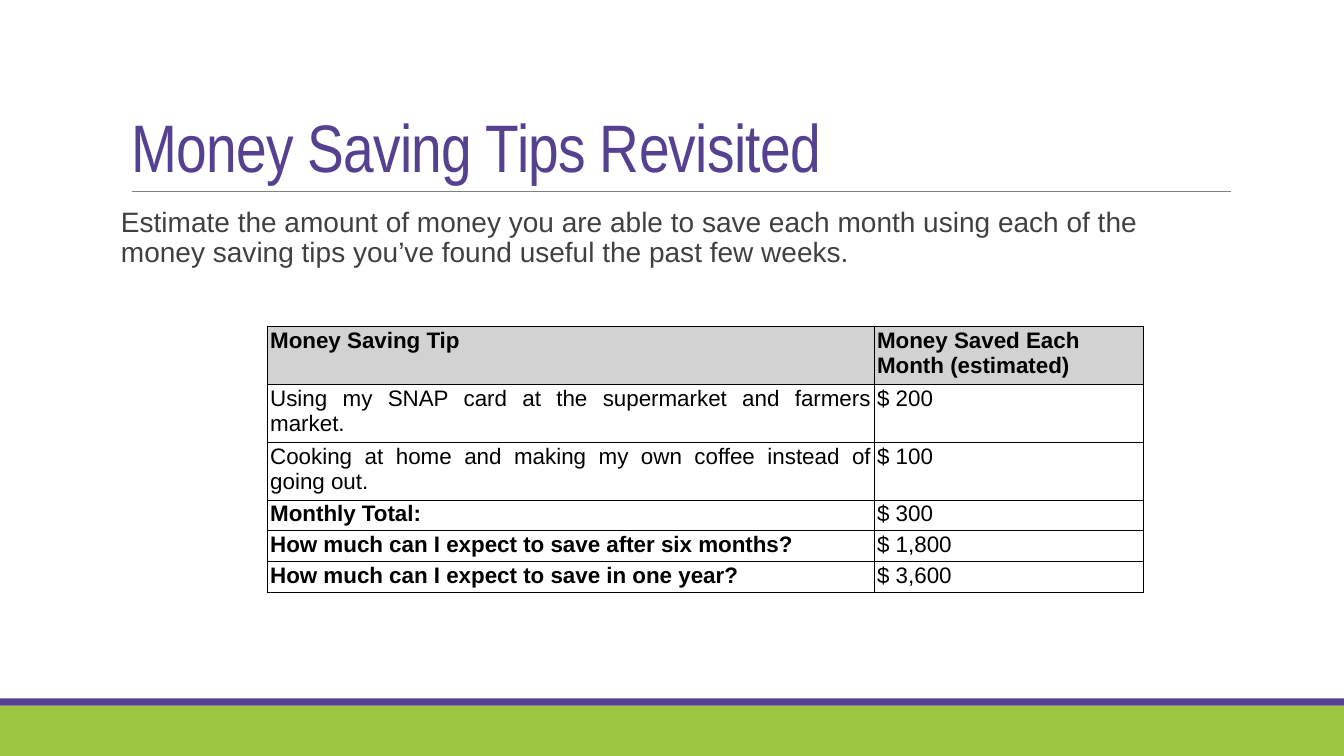
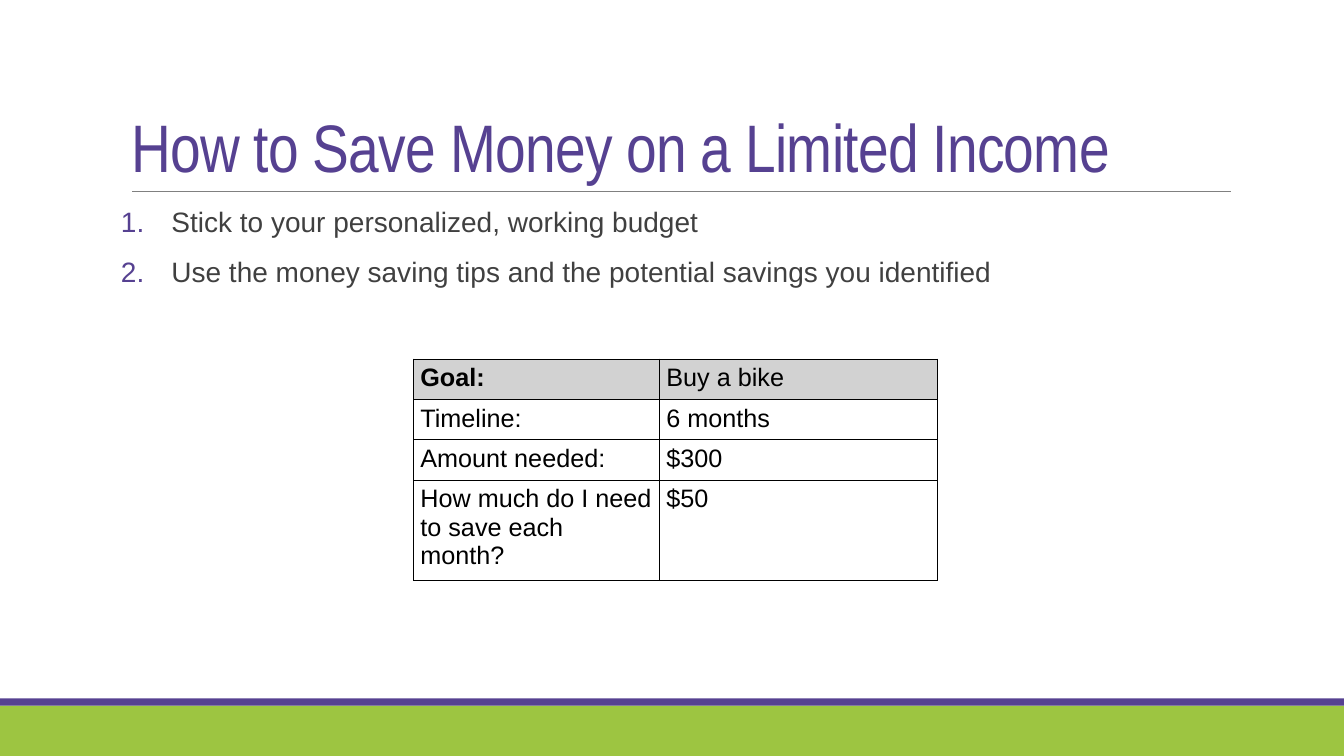
from dataclasses import dataclass

from lxml.etree import SubElement
from pptx import Presentation
from pptx.dml.color import RGBColor
from pptx.enum.shapes import MSO_CONNECTOR, MSO_SHAPE
from pptx.enum.text import MSO_ANCHOR, MSO_AUTO_SIZE, PP_ALIGN
from pptx.oxml.ns import qn
from pptx.util import Inches, Pt


@dataclass(frozen=True)
class Theme:
    purple: str = "564191"
    green: str = "9DC541"
    rule: str = "808080"
    text: str = "404040"
    black: str = "000000"
    header: str = "D2D2D2"
    title_font: str = "Arial Narrow"
    body_font: str = "Arial"
    title_size: int = 48
    body_size: int = 20


theme = Theme()
color = RGBColor.from_string
BANDS = [(7, 0.5, theme.green), (6.93, 0.07, theme.purple)]

SLIDES = [
    {
        "title": "Money Saving Tips Revisited",
        "body": [
            "Estimate the amount of money you are able to save each month using "
            "each of the money saving tips you’ve found useful the past few weeks."
        ],
        "numbered": False,
        "table": {
            "left": 2.65, "top": 3.24, "columns": [6.02, 2.67], "row_height": 0.3,
            "margins": (0.03, 0.02), "size": 16, "justified": True,
            "bold": {(0, 0), (0, 1), (3, 0), (4, 0), (5, 0)},
            "rows": [
                ("Money Saving Tip", "Money Saved Each Month (estimated)"),
                ("Using my SNAP card at the supermarket and farmers market.", "$ 200"),
                ("Cooking at home and making my own coffee instead of going out.", "$ 100"),
                ("Monthly Total:", "$ 300"),
                ("How much can I expect to save after six months?", "$ 1,800"),
                ("How much can I expect to save in one year?", "$ 3,600"),
            ],
        },
    },
    {
        "title": "How to Save Money on a Limited Income",
        "body": [
            "Stick to your personalized, working budget",
            "Use the money saving tips and the potential savings you identified",
        ],
        "numbered": True,
        "table": {
            "left": 4.1, "top": 3.56, "columns": [2.44, 2.76], "row_height": 0.38,
            "margins": (0.07, 0.05), "size": 18, "justified": False,
            "bold": {(0, 0)},
            "rows": [
                ("Goal:", "Buy a bike"),
                ("Timeline:", "6 months"),
                ("Amount needed:", "$300"),
                ("How much do I need to save each month?", "$50"),
            ],
        },
    },
]


def add_run(paragraph, text, font_name, size, font_color, bold=False):
    run = paragraph.add_run()
    run.text = text
    run.font.name = font_name
    run.font.size = Pt(size)
    run.font.bold = bold
    run.font.color.rgb = color(font_color)
    return run


def add_solid_fill(parent, fill_color):
    fill = SubElement(parent, qn("a:solidFill"))
    SubElement(fill, qn("a:srgbClr"), val=fill_color)


presentation = Presentation()
presentation.slide_width = Inches(13.33)
presentation.slide_height = Inches(7.5)
title_only = presentation.slide_layouts[5]

for content in SLIDES:
    slide = presentation.slides.add_slide(title_only)

    # Footer bands
    for top, height, band_color in BANDS:
        band = slide.shapes.add_shape(
            MSO_SHAPE.RECTANGLE, 0, Inches(top), presentation.slide_width, Inches(height))
        band.shadow.inherit = False
        band.fill.solid()
        band.fill.fore_color.rgb = color(band_color)
        band.line.fill.background()

    # Rule under the title
    rule = slide.shapes.add_connector(
        MSO_CONNECTOR.STRAIGHT, Inches(1.31), Inches(1.9), Inches(12.21), Inches(1.9))
    rule.line.color.rgb = color(theme.rule)
    rule.line.width = Pt(0.5)
    SubElement(rule.element.spPr, qn("a:effectLst"))

    # Title
    title = slide.shapes.title
    title.left, title.top = Inches(1.2), Inches(0.31)
    title.width, title.height = Inches(11), Inches(1.59)
    title.text_frame.auto_size = MSO_AUTO_SIZE.NONE
    title.text_frame.vertical_anchor = MSO_ANCHOR.BOTTOM
    paragraph = title.text_frame.paragraphs[0]
    paragraph.alignment = PP_ALIGN.LEFT
    paragraph.line_spacing = 0.85
    run = add_run(paragraph, content["title"], theme.title_font, theme.title_size, theme.purple)
    run.font._element.set("spc", "-50")

    # Body text
    body = slide.shapes.add_textbox(Inches(1.2), Inches(2.02), Inches(11), Inches(1.1))
    frame = body.text_frame
    frame.word_wrap = True
    frame.margin_left = frame.margin_right = 0
    for index, text in enumerate(content["body"]):
        paragraph = frame.add_paragraph() if index else frame.paragraphs[0]
        if content["numbered"]:
            properties = paragraph._p.get_or_add_pPr()
            properties.set("marL", str(Inches(0.5)))
            properties.set("indent", str(-Inches(0.5)))
            bullet_color = SubElement(properties, qn("a:buClr"))
            SubElement(bullet_color, qn("a:srgbClr"), val=theme.purple)
            SubElement(properties, qn("a:buAutoNum"), type="arabicPeriod")
        paragraph.line_spacing = 0.9
        paragraph.space_before = Pt(12 if index else 0)
        paragraph.space_after = Pt(2)
        add_run(paragraph, text, theme.body_font, theme.body_size, theme.text)

    # Table
    layout = content["table"]
    rows, widths = layout["rows"], layout["columns"]
    table = slide.shapes.add_table(
        len(rows), len(widths), Inches(layout["left"]), Inches(layout["top"]),
        Inches(sum(widths)), Inches(layout["row_height"] * len(rows))).table
    table.first_row = table.horz_banding = False
    for column, width in zip(table.columns, widths):
        column.width = Inches(width)
    side, edge = layout["margins"]
    for row_index, texts in enumerate(rows):
        for column_index, text in enumerate(texts):
            cell = table.cell(row_index, column_index)
            cell.margin_left = cell.margin_right = Inches(side)
            cell.margin_top = cell.margin_bottom = Inches(edge)
            for border in ("a:lnL", "a:lnR", "a:lnT", "a:lnB"):
                line = SubElement(cell._tc.get_or_add_tcPr(), qn(border), w=str(Pt(0.5)))
                add_solid_fill(line, theme.black)
            if row_index == 0:
                cell.fill.solid()
                cell.fill.fore_color.rgb = color(theme.header)
            else:
                cell.fill.background()
            paragraph = cell.text_frame.paragraphs[0]
            justified = layout["justified"] and (row_index, column_index) != (0, 1)
            paragraph.alignment = PP_ALIGN.JUSTIFY if justified else PP_ALIGN.LEFT
            add_run(paragraph, text, theme.body_font, layout["size"], theme.black,
                    bold=(row_index, column_index) in layout["bold"])

presentation.save("out.pptx")
